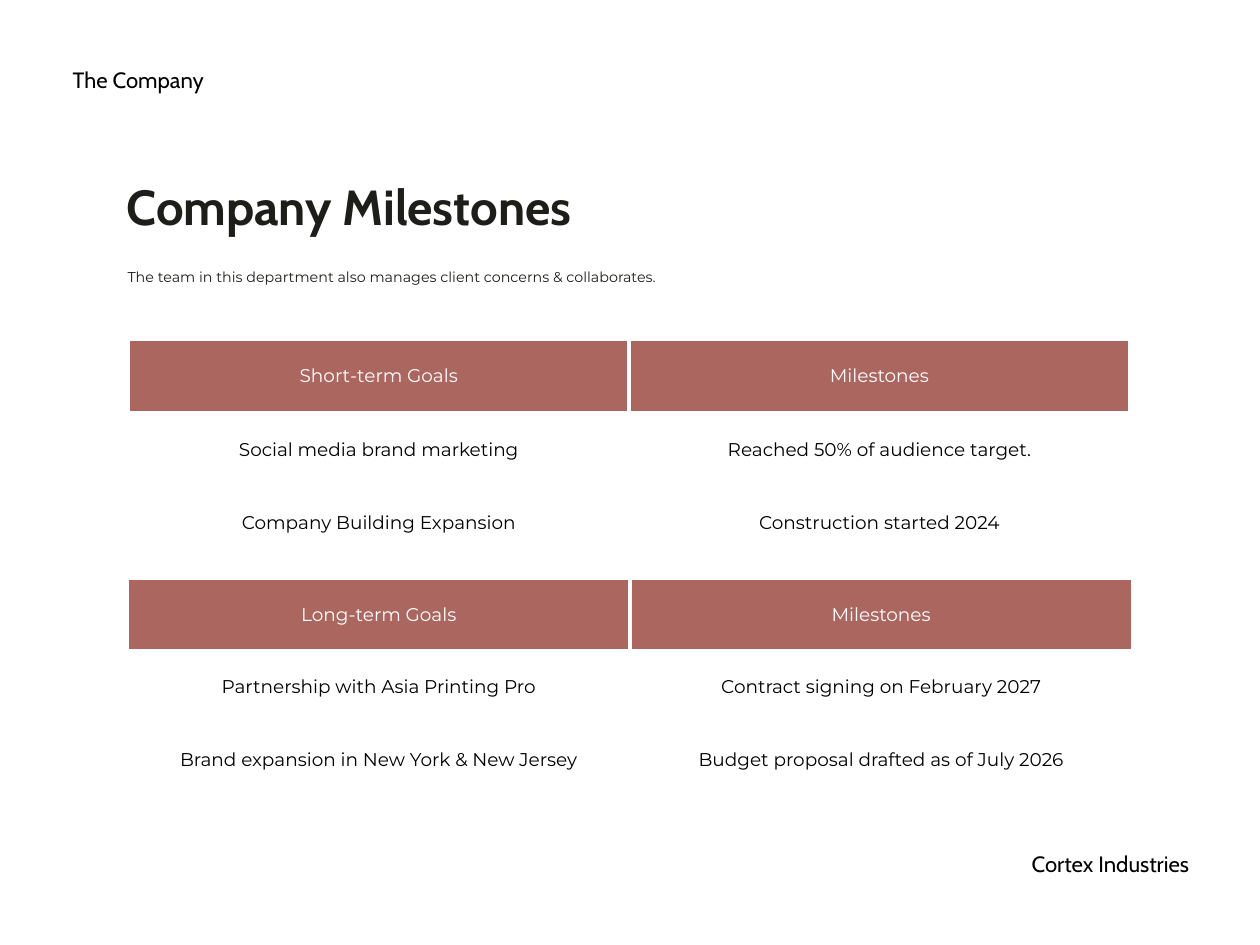
from dataclasses import dataclass, field
from typing import Any

from lxml.etree import SubElement
from pptx import Presentation
from pptx.dml.color import RGBColor
from pptx.enum.text import MSO_ANCHOR, MSO_AUTO_SIZE, PP_ALIGN
from pptx.oxml.ns import qn
from pptx.shapes.base import BaseShape
from pptx.slide import Slide
from pptx.table import _Cell
from pptx.text.text import _Paragraph
from pptx.util import Emu, Pt

PX = 9144
WHITE, BLACK, INK, CLAY = "FFFFFF", "000000", "1D1D1A", "AB675F"
BORDER_WIDTH = Pt(3)
FRAME_FORMAT = {
    "word_wrap": True,
    "auto_size": MSO_AUTO_SIZE.NONE,
    "vertical_anchor": MSO_ANCHOR.MIDDLE,
    "margin_left": Emu(3 * PX),
    "margin_right": Emu(3 * PX),
    "margin_top": Emu(3 * PX),
    "margin_bottom": Emu(3 * PX),
}
CELL_FORMAT = {
    "vertical_anchor": MSO_ANCHOR.MIDDLE,
    "margin_left": Emu(6 * PX),
    "margin_right": Emu(6 * PX),
    "margin_top": Emu(6 * PX),
    "margin_bottom": Emu(6 * PX),
}


@dataclass(frozen=True)
class Style:
    name: str
    size: int
    color: str
    bold: bool = False
    align: PP_ALIGN = PP_ALIGN.LEFT
    spacing: float = 1.0
    baseline: int = 0


@dataclass(frozen=True)
class Label:
    text: str
    box: tuple[int, int, int, int]
    style: Style


@dataclass(frozen=True)
class Goals:
    left: int
    top: int
    column_width: int
    row_height: int
    rows: list[tuple[str, str]] = field(default_factory=list)


TITLE = Label("Company Milestones", (140, 195, 664, 74), Style("Cabin", 40, INK, bold=True))
LABELS = [
    Label(
        "The team in this department also manages client concerns & collaborates.",
        (141, 297, 713, 31),
        Style("Montserrat", 20, INK, spacing=1.2, baseline=30),
    ),
    Label("Cortex Industries", (1049, 957, 296, 36), Style("Cabin", 18, BLACK, align=PP_ALIGN.RIGHT)),
    Label("The Company", (79, 72, 299, 36), Style("Cabin", 18, BLACK)),
]
GOALS = [
    Goals(145, 383, 565, 83, [
        ("Short-term Goals", "Milestones"),
        ("Social media brand marketing", "Reached 50% of audience target."),
        ("Company Building Expansion", "Construction started 2024"),
    ]),
    Goals(144, 653, 567, 82, [
        ("Long-term Goals", "Milestones"),
        ("Partnership with Asia Printing Pro", "Contract signing on February 2027"),
        ("Brand expansion in New York & New Jersey", "Budget proposal drafted as of July 2026"),
    ]),
]


def rgb(color: str) -> RGBColor:
    return RGBColor.from_string(color)


def apply_format(target: Any, values: dict[str, Any]) -> None:
    for key, value in values.items():
        setattr(target, key, value)


def write(paragraph: _Paragraph, text: str, style: Style) -> None:
    apply_format(paragraph, {"alignment": style.align, "line_spacing": style.spacing})
    run = paragraph.add_run()
    run.text = text
    apply_format(run.font, {"name": style.name, "size": Pt(style.size), "bold": style.bold})
    run.font.color.rgb = rgb(style.color)
    if style.baseline:
        run._r.get_or_add_rPr().set("baseline", str(style.baseline * 1000))


def fill_label(holder: BaseShape, label: Label) -> None:
    left, top, width, height = (Emu(length * PX) for length in label.box)
    apply_format(holder, {"left": left, "top": top, "width": width, "height": height})
    apply_format(holder.text_frame, FRAME_FORMAT)
    write(holder.text_frame.paragraphs[0], label.text, label.style)


def add_borders(cell: _Cell, color: str) -> None:
    properties = cell._tc.get_or_add_tcPr()
    for side in ("a:lnL", "a:lnR", "a:lnT", "a:lnB"):
        line = SubElement(properties, qn(side), w=str(BORDER_WIDTH))
        SubElement(SubElement(line, qn("a:solidFill")), qn("a:srgbClr"), val=color)


def add_goals(slide: Slide, goals: Goals) -> None:
    row_count, column_count = len(goals.rows), len(goals.rows[0])
    table = slide.shapes.add_table(
        row_count,
        column_count,
        Emu(goals.left * PX),
        Emu(goals.top * PX),
        Emu(goals.column_width * column_count * PX),
        Emu(goals.row_height * row_count * PX),
    ).table
    apply_format(table, {"first_row": False, "horz_banding": False})
    for row_index, texts in enumerate(goals.rows):
        fill, ink = (CLAY, WHITE) if row_index == 0 else (WHITE, BLACK)
        for column_index, text in enumerate(texts):
            cell = table.cell(row_index, column_index)
            apply_format(cell, CELL_FORMAT)
            add_borders(cell, WHITE)
            cell.fill.solid()
            cell.fill.fore_color.rgb = rgb(fill)
            style = Style("Montserrat", 15, ink, align=PP_ALIGN.CENTER)
            write(cell.text_frame.paragraphs[0], text, style)


def main() -> None:
    presentation = Presentation()
    apply_format(presentation, {"slide_width": Emu(1422 * PX), "slide_height": Emu(1067 * PX)})
    slide = presentation.slides.add_slide(presentation.slide_layouts.get_by_name("Title Only"))
    slide.background.fill.solid()
    slide.background.fill.fore_color.rgb = rgb(WHITE)
    for goals in GOALS:
        add_goals(slide, goals)
    fill_label(slide.shapes.title, TITLE)
    for label in LABELS:
        fill_label(slide.shapes.add_textbox(0, 0, 0, 0), label)
    presentation.save("out.pptx")


if __name__ == "__main__":
    main()
